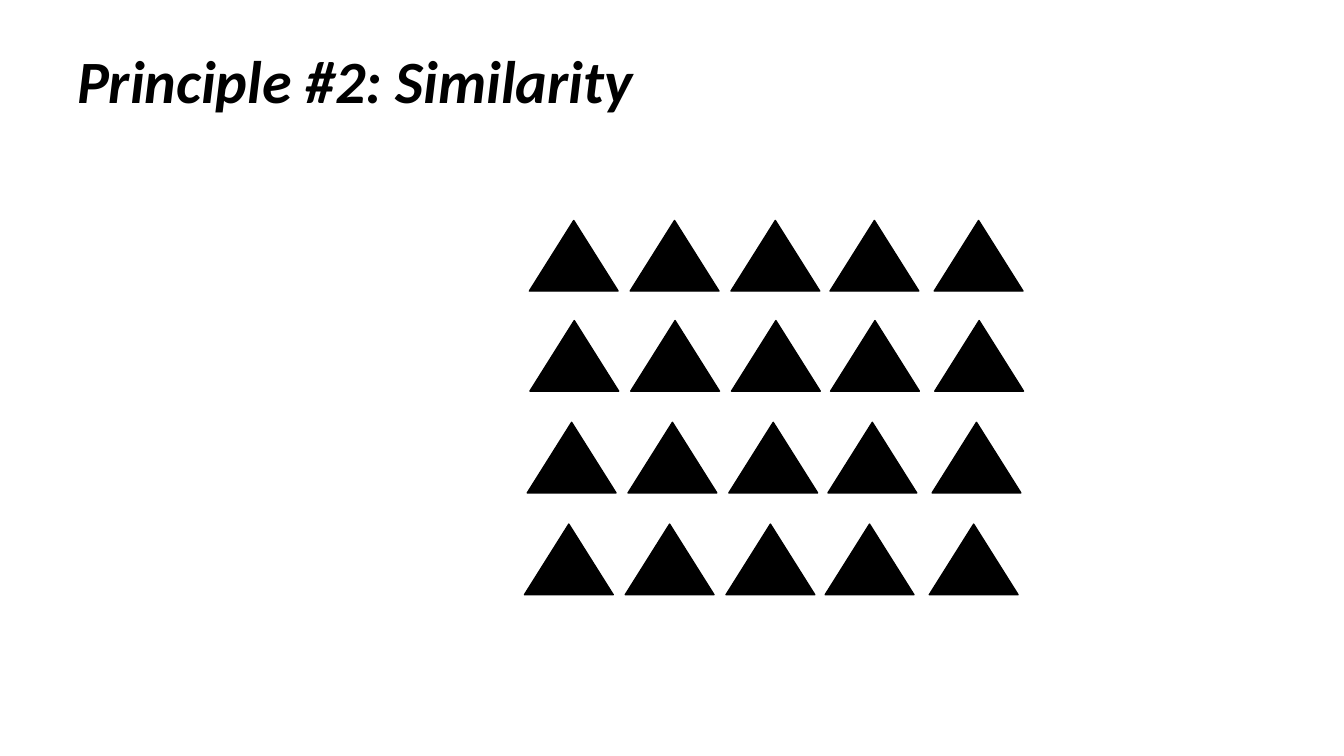
from pptx import Presentation
from pptx.dml.color import RGBColor
from pptx.enum.shapes import MSO_SHAPE as Preset
from pptx.enum.text import MSO_ANCHOR as Anchor
from pptx.util import Pt

COLORS = {"background": "FFFFFF", "ink": "000000"}
TITLE_FORMAT = {"name": "Calibri", "size": Pt(42.9), "bold": True, "italic": True}
TRIANGLE_SIZE = (63.4, 50.4)
COLUMN_OFFSETS = (0, 72, 144, 214.8, 289.2)
ROW_ORIGINS = ((378.1, 157.5), (378.5, 229), (376.6, 301.7), (374.6, 374.4))


class SlideBuilder:
    def __init__(self, presentation, colors):
        self.colors = colors
        self.slide = presentation.slides.add_slide(presentation.slide_layouts[6])
        self.paint(self.slide.background.fill, "background")

    def paint(self, fill, color):
        fill.solid()
        fill.fore_color.rgb = RGBColor.from_string(self.colors[color])

    def title(self, text, left, top, width, height):
        shape = self.slide.shapes.add_textbox(Pt(left), Pt(top), Pt(width), Pt(height))
        frame = shape.text_frame
        frame.word_wrap = True
        frame.vertical_anchor = Anchor.BOTTOM
        paragraph = frame.paragraphs[0]
        paragraph.line_spacing = 0.9
        run = paragraph.add_run()
        run.text = text
        for attribute, value in TITLE_FORMAT.items():
            setattr(run.font, attribute, value)
        self.paint(run.font.fill, "ink")

    def triangle(self, group, left, top):
        width, height = TRIANGLE_SIZE
        shape = group.shapes.add_shape(
            Preset.ISOSCELES_TRIANGLE, Pt(left), Pt(top), Pt(width), Pt(height)
        )
        shape.shadow.inherit = False
        self.paint(shape.fill, "ink")
        self.paint(shape.line.fill, "ink")
        shape.line.width = Pt(1)

    def triangle_row(self, left, top):
        group = self.slide.shapes.add_group_shape()
        for offset in COLUMN_OFFSETS:
            self.triangle(group, left + offset, top)


def main():
    presentation = Presentation()
    presentation.slide_width = Pt(960)
    presentation.slide_height = Pt(540)
    builder = SlideBuilder(presentation, COLORS)
    builder.title("Principle #2: Similarity", 48, 15, 654.5, 72)
    for left, top in ROW_ORIGINS:
        builder.triangle_row(left, top)
    presentation.save("out.pptx")


if __name__ == "__main__":
    main()
